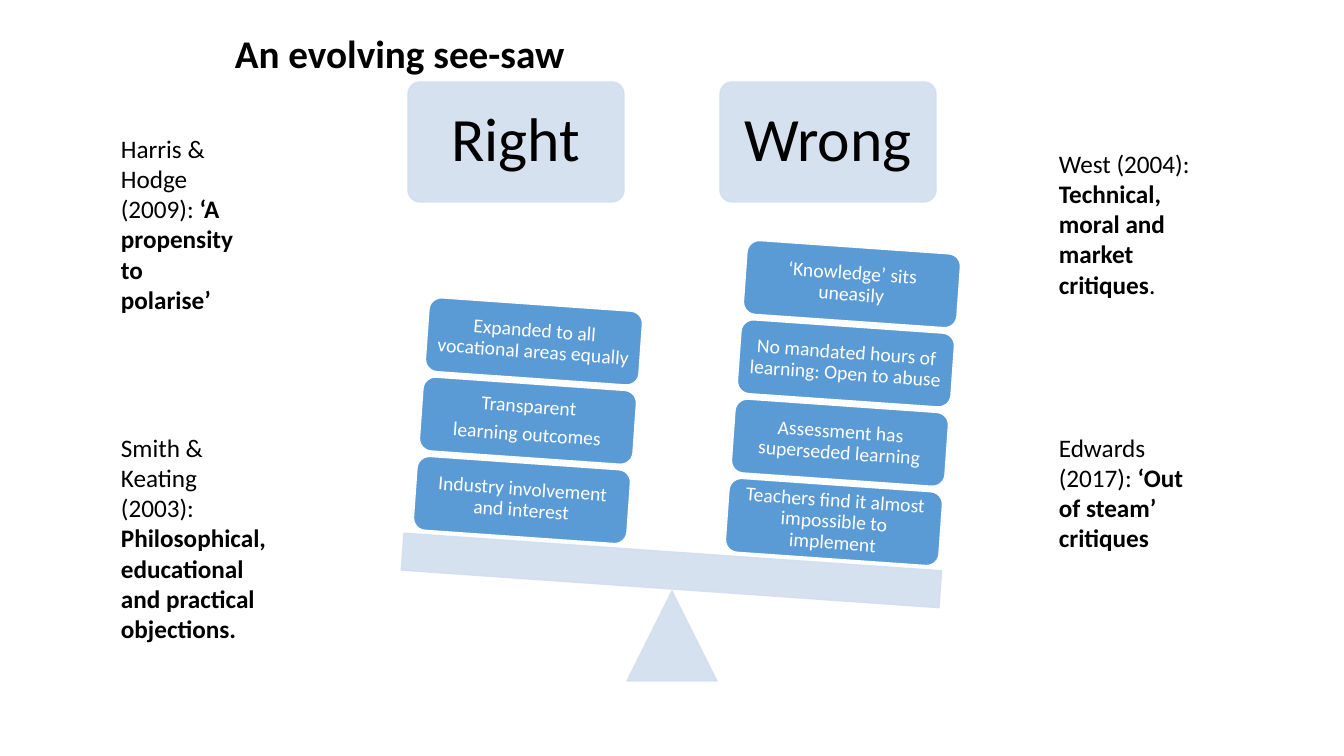
from lxml import etree
from pptx import Presentation, util as u
from pptx.dml.color import RGBColor
from pptx.enum import shapes, text
from pptx.oxml.ns import qn

# Content: runs are (words, bold)
TITLE = ((225, 24, 615, 57), 28, [[("An evolving see-saw", True)]])
NOTES = [
    ((1049, 143, 152, 163), 18, [
        [("West (2004):", False)],
        [("Technical, moral and market critiques", True), (".", False)]]),
    ((111, 128, 135, 194), 18, [
        [("Harris & Hodge (2009): ", False), ("‘A propensity to polarise’", True)]]),
    ((111, 427, 173, 254), 18, [
        [("Smith & Keating (2003): ", False),
         ("Philosophical, educational and practical objections.", True)]]),
    ((1049, 427, 147, 132), 18, [
        [("Edwards (2017): ", False), ("‘Out of steam’ critiques", True)]]),
]
# Each side: heading, heading left, lowest block corner, blocks from the bottom up
SIDES = [
    ("Right", 408, (415, 463), [
        ["Industry involvement and interest"],
        ["Transparent", "learning outcomes"],
        ["Expanded to all vocational areas equally"]]),
    ("Wrong", 720, (727, 485), [
        ["Teachers find it almost impossible to implement"],
        ["Assessment has superseded learning"],
        ["No mandated hours of learning: Open to abuse"],
        ["‘Knowledge’ sits uneasily"]]),
]
PALE, BLUE, WHITE, BLACK = "D2DEEF", "5B9BD5", "FFFFFF", "000000"
TILT, STEP_X, STEP_Y = 4, 6, 79.3
KIND = shapes.MSO_SHAPE

deck = Presentation()


def px(n):
    return round(n * 914400 / 100.8)


deck.slide_width, deck.slide_height = px(1344), px(756)
slide = deck.slides.add_slide(deck.slide_layouts[6])


def rgb(code):
    return RGBColor.from_string(code)


def apply(item, values):
    for name, value in values.items():
        setattr(item, name, value)


def write(frame, paras, size, color, form):
    for i, runs in enumerate(paras):
        para = frame.paragraphs[0] if i == 0 else frame.add_paragraph()
        apply(para, form)
        for words, bold in runs:
            run = para.add_run()
            run.text = words
            apply(run.font, {"size": u.Pt(size), "name": "Calibri", "bold": bold})
            run.font.color.rgb = rgb(color)


def draw(kind, box, fill, line, clear=False, turn=0):
    part = slide.shapes.add_shape(kind, *map(px, box))
    part.shadow.inherit = False
    part.rotation = turn
    part.fill.solid()
    part.fill.fore_color.rgb = rgb(fill)
    part.line.color.rgb = rgb(line)
    part.line.width = u.Pt(1)
    if clear:
        for tint in part.fill._xPr.iter(qn("a:srgbClr")):
            etree.SubElement(tint, qn("a:alpha")).set("val", "90000")
    return part


def label(part, lines, size, color, inset):
    frame = part.text_frame
    sides = ("left", "right", "top", "bottom")
    apply(frame, {f"margin_{side}": px(inset) for side in sides})
    apply(frame, {"word_wrap": True, "vertical_anchor": text.MSO_ANCHOR.MIDDLE})
    form = {"alignment": text.PP_ALIGN.CENTER, "line_spacing": 0.9,
            "space_after": u.Pt(size * 0.35)}
    write(frame, [[(line, False)] for line in lines], size, color, form)


# Headings
for name, left, _, _ in SIDES:
    head = draw(KIND.ROUNDED_RECTANGLE, (left, 82, 216, 120), PALE, PALE, True)
    head.adjustments[0] = 0.1
    label(head, [name], 44, BLACK, 16)

# Pivot and plank
draw(KIND.ISOSCELES_TRIANGLE, (627, 591, 90, 90), PALE, PALE, True)
draw(KIND.RECTANGLE, (402, 552, 539, 37), PALE, PALE, True, TILT)

# Stacked blocks
for _, _, (left, top), blocks in SIDES:
    for i, lines in enumerate(blocks):
        box = (left + i * STEP_X, top - i * STEP_Y, 214, 74)
        block = draw(KIND.ROUNDED_RECTANGLE, box, BLUE, WHITE, turn=TILT)
        label(block, lines, 14, WHITE, 6)

# Title and side notes
for box, size, paras in [TITLE] + NOTES:
    frame = slide.shapes.add_textbox(*map(px, box)).text_frame
    apply(frame, {"word_wrap": True,
                  "auto_size": text.MSO_AUTO_SIZE.SHAPE_TO_FIT_TEXT})
    write(frame, paras, size, BLACK, {})

deck.save("out.pptx")
